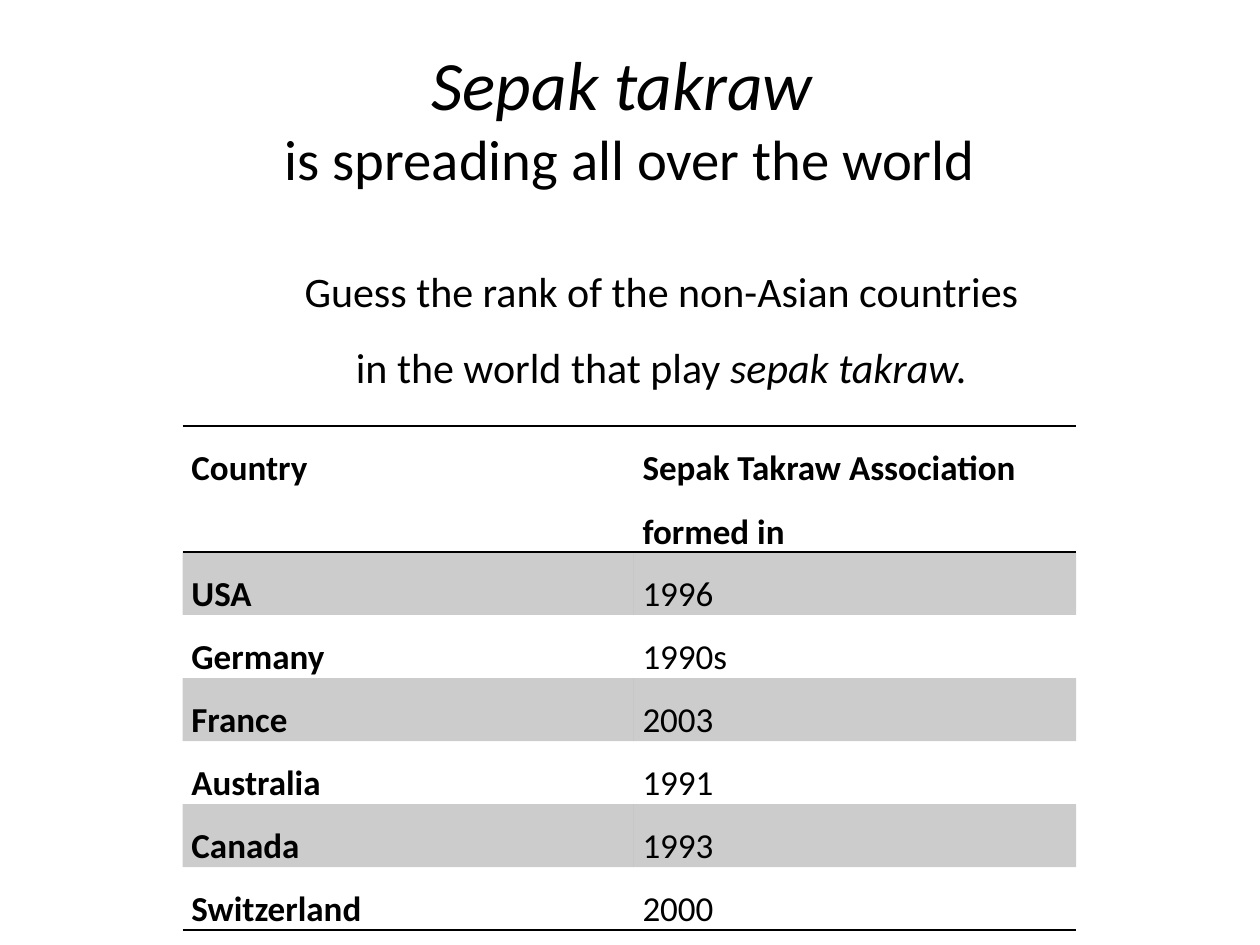
from lxml.etree import SubElement
from pptx import Presentation
from pptx.dml.color import RGBColor
from pptx.enum.text import MSO_ANCHOR, PP_ALIGN
from pptx.oxml.ns import qn
from pptx.util import Pt

HEAD = [("Sepak takraw ", "title", True), ("is spreading all over the world", "sub", False)]
TASK = [("Guess the rank of the non-Asian countries in the world that play ", "body", False),
        ("sepak takraw.", "body", True)]
ROWS = [("Country", "Sepak Takraw Association formed in"),
        ("USA", "1996"), ("Germany", "1990s"), ("France", "2003"),
        ("Australia", "1991"), ("Canada", "1993"), ("Switzerland", "2000")]
THEME = {"font": "Calibri", "ink": RGBColor(0, 0, 0), "band": 20, "rule": 1,
         "title": 39.6, "sub": 32.4, "body": 24, "cell": 20}
PLAIN = "{2D5ABB26-0587-4C30-8999-92F81FD0307C}"
BOXES = {"head": (36, 21.6, 648, 90), "task": (125.28, 133.92, 469.44, 90)}
LEFT, TOP, COLS, ROW = 104.4, 243.36, (257.76, 252.72), 36


def put(item, **vals):
    for name, val in vals.items():
        setattr(item, name, val)


def write(para, text, size, **style):
    run = para.add_run()
    run.text = text
    put(run.font, name=THEME["font"], size=Pt(THEME[size]), **style)
    run.font.color.rgb = THEME["ink"]


def box(slide, name, anchor):
    frame = slide.shapes.add_textbox(*map(Pt, BOXES[name])).text_frame
    put(frame, word_wrap=True, vertical_anchor=anchor)
    para = frame.paragraphs[0]
    para.alignment = PP_ALIGN.CENTER
    return para


def rule(cell, side):
    line = SubElement(cell._tc.get_or_add_tcPr(), qn("a:ln" + side), w=str(Pt(THEME["rule"])))
    fill = SubElement(line, qn("a:solidFill"))
    SubElement(fill, qn("a:srgbClr"), val=str(THEME["ink"]))


def paint(cell, band):
    if not band:
        cell.fill.background()
        return
    cell.fill.solid()
    cell.fill.fore_color.rgb = THEME["ink"]
    tone = cell._tc.tcPr.find(qn("a:solidFill"))[0]
    SubElement(tone, qn("a:alpha"), val=str(THEME["band"] * 1000))


def grid(slide):
    last = len(ROWS) - 1
    high = [ROW * 2] + [ROW] * last
    size = map(Pt, (LEFT, TOP, sum(COLS), sum(high)))
    table = slide.shapes.add_table(len(ROWS), len(COLS), *size).table
    put(table, first_row=False, horz_banding=False)
    table._tbl.tblPr.find(qn("a:tableStyleId")).text = PLAIN
    for col, width in zip(table.columns, COLS):
        col.width = Pt(width)
    for r, row in enumerate(ROWS):
        table.rows[r].height = Pt(high[r])
        for c, text in enumerate(row):
            cell = table.cell(r, c)
            put(cell, margin_left=Pt(5), margin_right=Pt(5), margin_top=0, margin_bottom=0)
            for side in {0: "TB", last: "B"}.get(r, ""):
                rule(cell, side)
            paint(cell, r % 2)
            para = cell.text_frame.paragraphs[0]
            para.line_spacing = 1.5
            write(para, text, "cell", bold=r == 0 or c == 0)


def main():
    """Build the slide on the spread of sepak takraw."""
    deck = Presentation()
    put(deck, slide_width=Pt(720), slide_height=Pt(540))
    slide = deck.slides.add_slide(deck.slide_layouts[6])
    para = box(slide, "head", MSO_ANCHOR.MIDDLE)
    for i, (text, size, slant) in enumerate(HEAD):
        if i:
            para.add_line_break()
        write(para, text, size, italic=slant)
    para = box(slide, "task", MSO_ANCHOR.TOP)
    put(para, level=1, line_spacing=1.5)
    para._p.get_or_add_pPr().set("marL", str(Pt(36)))
    for text, size, slant in TASK:
        write(para, text, size, italic=slant)
    grid(slide)
    deck.save("out.pptx")


if __name__ == "__main__":
    main()
